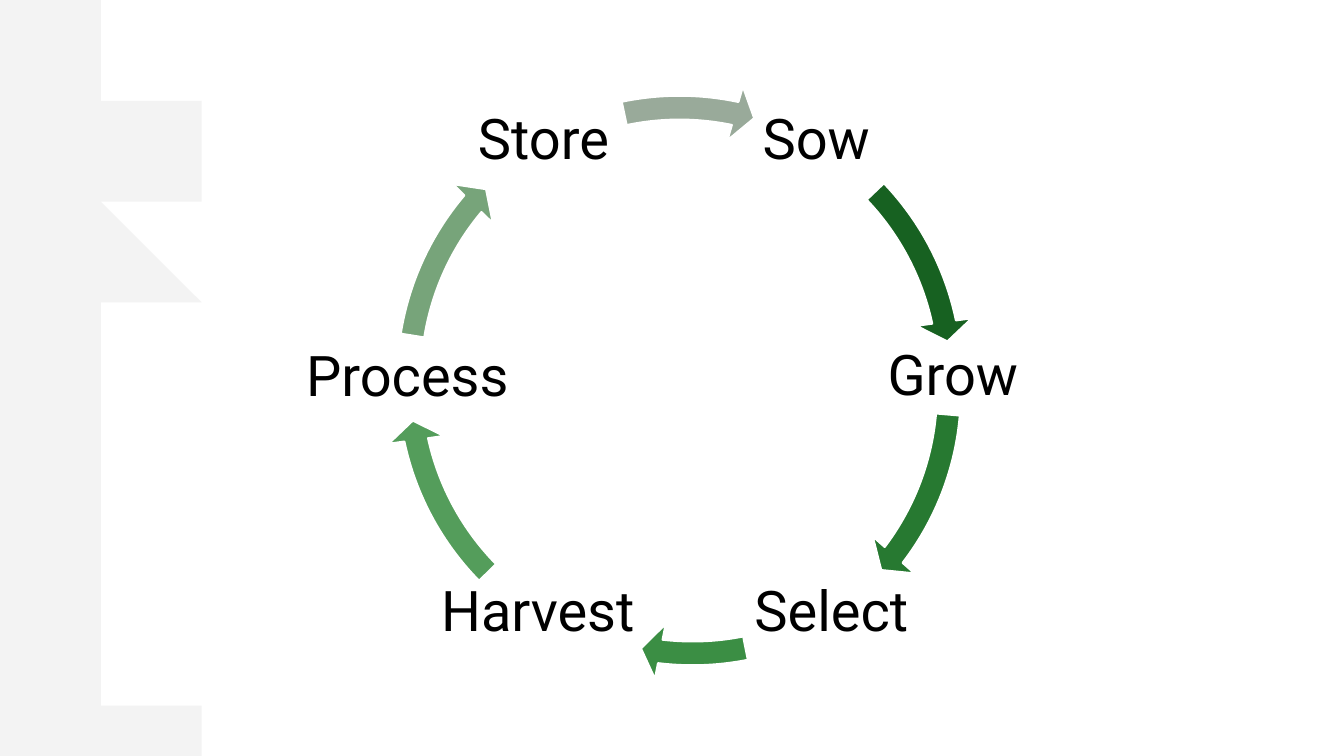
from pptx import Presentation
from pptx import util as u
from pptx.dml.color import RGBColor
from pptx.enum import shapes, text
from pptx.oxml import parse_xml
from pptx.oxml.ns import nsdecls, qn

WHITE = RGBColor(0xFF, 0xFF, 0xFF)
BLACK = RGBColor(0, 0, 0)
GREY = RGBColor(0xE8, 0xE8, 0xE8)
FONT = "Roboto"
RING = 5.92  # diameter of the arrow ring

# Label, its box, then the next arrow: left, top, start and end degrees, colour
CYCLE = [
    ("Sow", (7.49, 0.8, 1.21, 1.21), (3.78, 0.79), 316.38, 348.05, "176121"),
    ("Grow", (8.47, 3.38, 1.96, 0.73), (3.77, 0.92), 4.96, 37.29, "277931"),
    ("Select", (7.4, 5.67, 1.69, 0.84), (3.91, 0.84), 78.72, 96.86, "3B8E44"),
    ("Harvest", (4.31, 5.69, 2.05, 0.8), (3.79, 0.84), 135.53, 167.86, "549D5B"),
    ("Process", (2.91, 3.33, 2.26, 0.85), (3.78, 0.79), 189.03, 220.15, "77A47A"),
    ("Store", (4.59, 0.95, 1.6, 0.91), (3.78, 0.79), 258.18, 281.86, "99AA9A"),
]

# Corners of the torn edge, from top to bottom
EDGE = [
    (1.51, 0), (1.85, 0.12), (1.45, 0.08), (1.47, 0.18), (1.7, 0.25),
    (1.8, 0.41), (1.45, 0.4), (1.26, 0.37), (1.24, 0.5), (1.49, 0.61),
    (1.07, 0.57), (0.83, 0.58), (0.37, 0.51), (1.39, 1), (1.28, 1.06),
    (1.66, 1.33), (1.5, 1.35), (1.53, 1.49), (1.94, 1.75), (1.78, 1.81),
    (1.95, 2.02), (2.12, 2.2), (1.97, 2.3), (1.71, 2.27), (2.1, 2.42),
    (0.84, 2.07), (1.36, 2.4), (1.62, 2.63), (1.93, 2.72), (1.64, 2.76),
    (1.46, 2.8), (1.1, 2.79), (0.95, 3.12), (0.55, 3.22), (1.15, 3.64),
    (0.75, 3.53), (0.69, 3.71), (0.96, 4), (0.92, 4.55), (0.73, 4.6),
    (0.64, 4.83), (0.39, 4.79), (0.73, 5.05), (0.37, 5.03), (0.62, 5.26),
    (1.03, 5.64), (0.63, 5.46), (1.05, 5.85), (1.34, 6.34), (1.11, 6.29),
    (1.39, 6.57), (1.69, 6.78), (1.09, 6.67), (1.4, 6.93), (1.58, 7.03),
    (1.76, 7.28), (2.17, 7.5),
]


def add_edge(slide, left, top, high):
    """Draw the pale torn band from the given corner."""
    pen = slide.shapes.build_freeform(0, 0, scale=u.Inches(1))
    pen.add_line_segments(EDGE + [(0, high)], close=True)
    band = pen.convert_to_shape(u.Inches(left), u.Inches(top))
    band.shadow.inherit = False
    band.fill.solid()
    band.fill.fore_color.rgb = GREY
    band.line.fill.background()
    # Half transparent
    tint = band.element.spPr.find(qn("a:solidFill"))[0]
    tint.append(parse_xml(f'<a:alpha {nsdecls("a")} val="50000"/>'))


def add_label(slide, box, words):
    """Write one stage name, centred in its box."""
    frame = slide.shapes.add_textbox(*map(u.Inches, box)).text_frame
    frame.word_wrap = True
    frame.vertical_anchor = text.MSO_ANCHOR.MIDDLE
    for side in ("left", "right", "top", "bottom"):
        setattr(frame, f"margin_{side}", u.Inches(0.06))
    frame.text = words
    para = frame.paragraphs[0]
    para.alignment = text.PP_ALIGN.CENTER
    para.line_spacing = 0.9
    font = para.runs[0].font
    font.name, font.size = FONT, u.Pt(40)
    font.color.rgb = BLACK


def add_arrow(slide, left, top, start, end, shade):
    """Draw one curved arrow of the ring between two angles."""
    arrow = slide.shapes.add_shape(
        shapes.MSO_SHAPE.CIRCULAR_ARROW,
        *map(u.Inches, (left, top, RING, RING)))
    # Band width, head angle, end, start, head width; a degree is 0.6
    for i, value in enumerate((0.04, 2.5, end * 0.6, start * 0.6, 0.047)):
        arrow.adjustments[i] = value
    arrow.shadow.inherit = False
    arrow.fill.solid()
    arrow.fill.fore_color.rgb = RGBColor.from_string(shade)
    arrow.line.color.rgb = WHITE
    arrow.line.width = u.Pt(1.5)


def add_cycle(slide):
    """Place every stage and the arrow that follows it."""
    for words, box, spot, start, end, shade in CYCLE:
        add_label(slide, box, words)
        add_arrow(slide, *spot, start, end, shade)


def main():
    deck = Presentation()
    deck.slide_width, deck.slide_height = u.Inches(13.33), u.Inches(7.5)
    slide = deck.slides.add_slide(deck.slide_layouts[6])
    add_edge(slide, 0, 0, 7.5)
    add_cycle(slide)
    deck.save("out.pptx")


if __name__ == "__main__":
    main()
